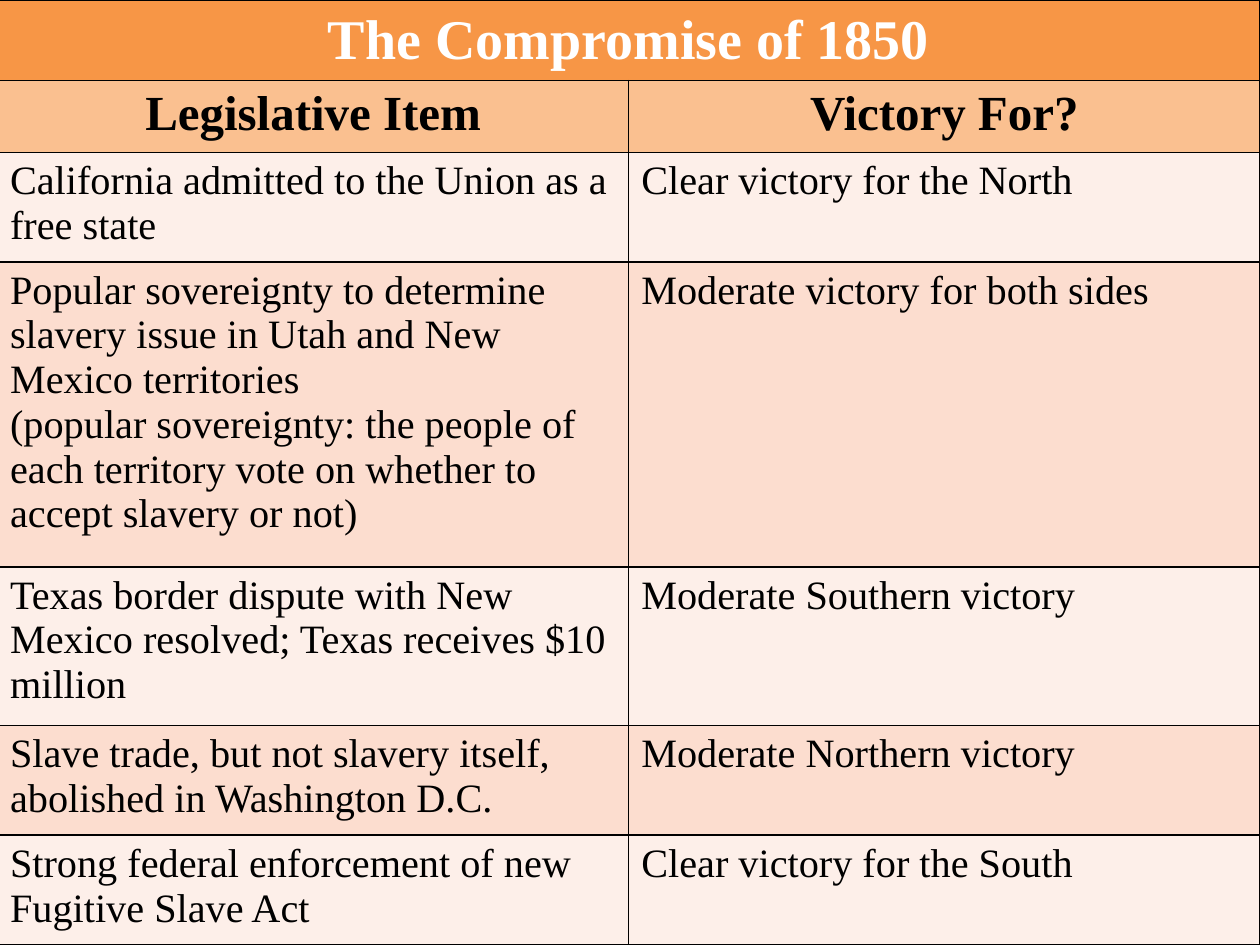
from lxml import etree
from pptx import Presentation
from pptx.dml.color import RGBColor
from pptx.enum.text import MSO_ANCHOR, PP_ALIGN
from pptx.oxml.ns import qn
from pptx.util import Inches, Pt

CENTER, LEFT = PP_ALIGN.CENTER, PP_ALIGN.LEFT
TOP, MIDDLE = MSO_ANCHOR.TOP, MSO_ANCHOR.MIDDLE
BLANK_LAYOUT = 6

FONT = "Times New Roman"
TITLE = "The Compromise of 1850"
HEADINGS = ("Legislative Item", "Victory For?")
# Legislative item (one string per paragraph), outcome, row height
ITEMS = [
    (["California admitted to the Union as a free state"],
     "Clear victory for the North", 0.87),
    (["Popular sovereignty to determine slavery issue in Utah and New Mexico territories",
      "(popular sovereignty: the people of each territory vote on whether to accept slavery or not)"],
     "Moderate victory for both sides", 2.42),
    (["Texas border dispute with New Mexico resolved; Texas receives $10 million"],
     "Moderate Southern victory", 1.26),
    (["Slave trade, but not slavery itself, abolished in Washington D.C."],
     "Moderate Northern victory", 0.87),
    (["Strong federal enforcement of new Fugitive Slave Act"],
     "Clear victory for the South", 0.87),
]
TITLE_HEIGHT, HEADING_HEIGHT = 0.64, 0.57
TABLE_LEFT, COLUMN_WIDTH = -0.02, 5.01

BLACK, WHITE = "000000", "FFFFFF"
TITLE_FILL, HEADING_FILL = "F79646", "FAC090"
BAND_FILLS = ("FDEFE9", "FCDDCF")


def color(hex_code):
    return RGBColor.from_string(hex_code)


def add_borders(cell):
    """Draw a thin black line on all four sides; must run before the fill is set."""
    properties = cell._tc.get_or_add_tcPr()
    for side in ("a:lnL", "a:lnR", "a:lnT", "a:lnB"):
        line = etree.SubElement(properties, qn(side), w=str(Pt(1)))
        fill = etree.SubElement(line, qn("a:solidFill"))
        etree.SubElement(fill, qn("a:srgbClr"), val=BLACK)


def fill_cell(cell, paragraphs, fill, size, font_color=BLACK, bold=False,
              align=LEFT, anchor=TOP):
    add_borders(cell)
    cell.fill.solid()
    cell.fill.fore_color.rgb = color(fill)
    cell.vertical_anchor = anchor
    text_frame = cell.text_frame
    for index, text in enumerate(paragraphs):
        paragraph = text_frame.add_paragraph() if index else text_frame.paragraphs[0]
        paragraph.alignment = align
        run = paragraph.add_run()
        run.text = text
        run.font.name = FONT
        run.font.size = Pt(size)
        run.font.bold = bold
        run.font.color.rgb = color(font_color)


def main():
    presentation = Presentation()
    presentation.slide_width, presentation.slide_height = Inches(10), Inches(7.5)
    slide = presentation.slides.add_slide(presentation.slide_layouts[BLANK_LAYOUT])

    heights = [TITLE_HEIGHT, HEADING_HEIGHT] + [height for _, _, height in ITEMS]
    table = slide.shapes.add_table(
        len(heights), len(HEADINGS), Inches(TABLE_LEFT), 0,
        Inches(COLUMN_WIDTH * len(HEADINGS)), Inches(sum(heights))).table
    for column in table.columns:
        column.width = Inches(COLUMN_WIDTH)
    for row, height in zip(table.rows, heights):
        row.height = Inches(height)

    table.cell(0, 0).merge(table.cell(0, 1))
    fill_cell(table.cell(0, 0), [TITLE], TITLE_FILL, 32, WHITE, True, CENTER, MIDDLE)
    add_borders(table.cell(0, 1))
    for column, heading in enumerate(HEADINGS):
        fill_cell(table.cell(1, column), [heading], HEADING_FILL, 28, bold=True, align=CENTER)
    for index, (item, outcome, _) in enumerate(ITEMS):
        band = BAND_FILLS[index % 2]
        for column, paragraphs in enumerate((item, [outcome])):
            fill_cell(table.cell(index + 2, column), paragraphs, band, 23)

    presentation.save("out.pptx")


if __name__ == "__main__":
    main()
